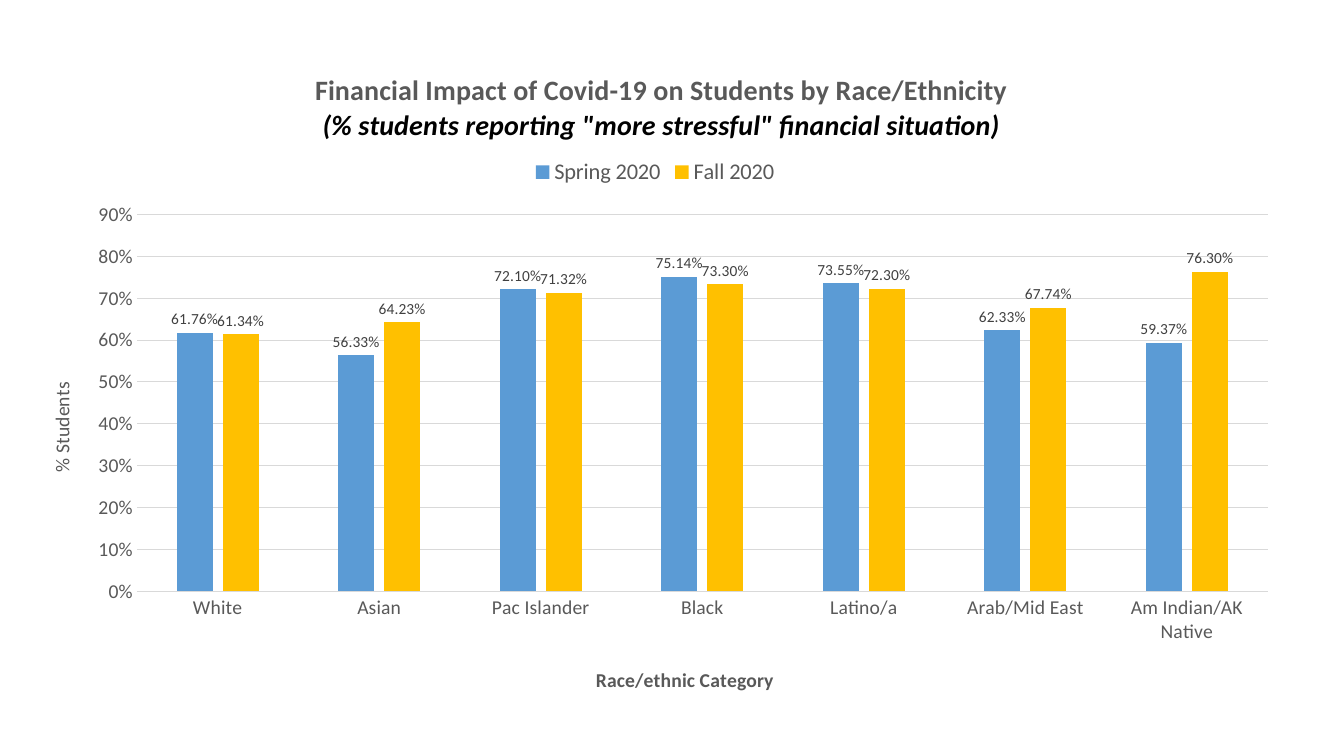
from lxml import etree
from pptx import Presentation
from pptx.chart.data import CategoryChartData
from pptx.dml.color import RGBColor
from pptx.enum.chart import XL_CHART_TYPE, XL_LABEL_POSITION, XL_LEGEND_POSITION, XL_TICK_MARK
from pptx.oxml.ns import qn
from pptx.util import Inches, Pt

SLIDE_SIZE = 13.33, 7.5
CHART_BOX = 0.19, 0.48, 12.63, 6.55
FONT = "Calibri"
GREY, BLACK, GRID, LABEL = "595959", "000000", "D9D9D9", "404040"

HEADING = [
    ("Financial Impact of Covid-19 on Students by Race/Ethnicity",
     dict(size=20, color=GREY, bold=True, italic=False)),
    ('(% students reporting "more stressful" financial situation)',
     dict(size=20, color=BLACK, bold=True, italic=True)),
]
CATEGORY_HEADING = [("Race/ethnic Category", dict(size=14, color=GREY, bold=True))]
VALUE_HEADING = [("% Students", dict(size=14, color=GREY, bold=False))]

GROUPS = ["White", "Asian", "Pac Islander", "Black", "Latino/a",
          "Arab/Mid East", "Am Indian/AK Native"]
TERMS = [
    ("Spring 2020", "5B9BD5", [0.6176, 0.5633, 0.721, 0.7514, 0.7355, 0.6233, 0.5937]),
    ("Fall 2020", "FFC000", [0.6134, 0.6423, 0.7132, 0.733, 0.723, 0.6774, 0.763]),
]

PLACES = {
    "c:chart/c:title": dict(x=0.23, y=0.03),
    "c:chart/c:legend": dict(x=0.4, y=0.16),
    "c:chart/c:plotArea": dict(x=0.0925, y=0.2516, w=0.888, h=0.571),
    "c:chart/c:plotArea/c:catAx/c:title": dict(x=0.45, y=0.93),
    "c:chart/c:plotArea/c:valAx/c:title": dict(x=0.02, y=0.5),
}


def rgb(hex_string):
    return RGBColor.from_string(hex_string)


def style(font, formats):
    font.name = FONT
    for key, value in formats.items():
        if key == "color":
            font.color.rgb = rgb(value)
        else:
            setattr(font, key, Pt(value) if key == "size" else value)


def write_heading(frame, lines):
    for index, (words, formats) in enumerate(lines):
        paragraph = frame.add_paragraph() if index else frame.paragraphs[0]
        run = paragraph.add_run()
        run.text = words
        style(run.font, formats)


def draw_line(line, color):
    line.color.rgb = rgb(color)
    line.width = Pt(0.75)


def place(part, shares):
    for old in part.findall(qn("c:layout")):
        part.remove(old)
    layout = etree.Element(qn("c:layout"))
    manual = etree.SubElement(layout, qn("c:manualLayout"))
    if "w" in shares:
        etree.SubElement(manual, qn("c:layoutTarget")).set("val", "inner")
    for axis in "xy":
        etree.SubElement(manual, qn(f"c:{axis}Mode")).set("val", "edge")
    for key, share in shares.items():
        etree.SubElement(manual, qn(f"c:{key}")).set("val", str(share))
    overlay = part.find(qn("c:overlay"))
    if overlay is None:
        part.insert(0, layout)
    else:
        overlay.addprevious(layout)


deck = Presentation()
deck.slide_width, deck.slide_height = map(Inches, SLIDE_SIZE)
slide = deck.slides.add_slide(deck.slide_layouts[6])

survey = CategoryChartData(number_format="0.00%")
survey.categories = GROUPS
for term, _, shares in TERMS:
    survey.add_series(term, shares)
chart = slide.shapes.add_chart(
    XL_CHART_TYPE.COLUMN_CLUSTERED, *map(Inches, CHART_BOX), survey).chart
style(chart.font, dict(size=10, color=BLACK))

write_heading(chart.chart_title.text_frame, HEADING)
chart.chart_title.include_in_layout = False
chart.has_legend = True
chart.legend.position = XL_LEGEND_POSITION.TOP
chart.legend.include_in_layout = False
style(chart.legend.font, dict(size=16, color=GREY))

columns = chart.plots[0]
columns.gap_width, columns.overlap, columns.vary_by_categories = 219, -27, False
for series, (_, color, _) in zip(columns.series, TERMS):
    series.format.fill.solid()
    series.format.fill.fore_color.rgb = rgb(color)
    labels = series.data_labels
    for key, value in dict(show_value=True, number_format="0.00%",
                           number_format_is_linked=False,
                           position=XL_LABEL_POSITION.OUTSIDE_END).items():
        setattr(labels, key, value)
    style(labels.font, dict(size=11, color=LABEL))

groups, percent = chart.category_axis, chart.value_axis
for axis, heading in ((groups, CATEGORY_HEADING), (percent, VALUE_HEADING)):
    write_heading(axis.axis_title.text_frame, heading)
    axis.major_tick_mark = axis.minor_tick_mark = XL_TICK_MARK.NONE
    style(axis.tick_labels.font, dict(size=14, color=GREY))
draw_line(groups.format.line, GRID)
draw_line(percent.major_gridlines.format.line, GRID)
percent.format.line.fill.background()
percent.minimum_scale, percent.maximum_scale, percent.major_unit = 0, 0.9, 0.1
percent.tick_labels.number_format = "0%"
percent.tick_labels.number_format_is_linked = False

for body in chart.element.xpath("c:chart/c:plotArea/c:valAx/c:title//a:bodyPr"):
    body.set("rot", "-5400000")
    body.set("vert", "horz")
for route, shares in PLACES.items():
    place(chart.element.xpath(route)[0], shares)

deck.save("out.pptx")
